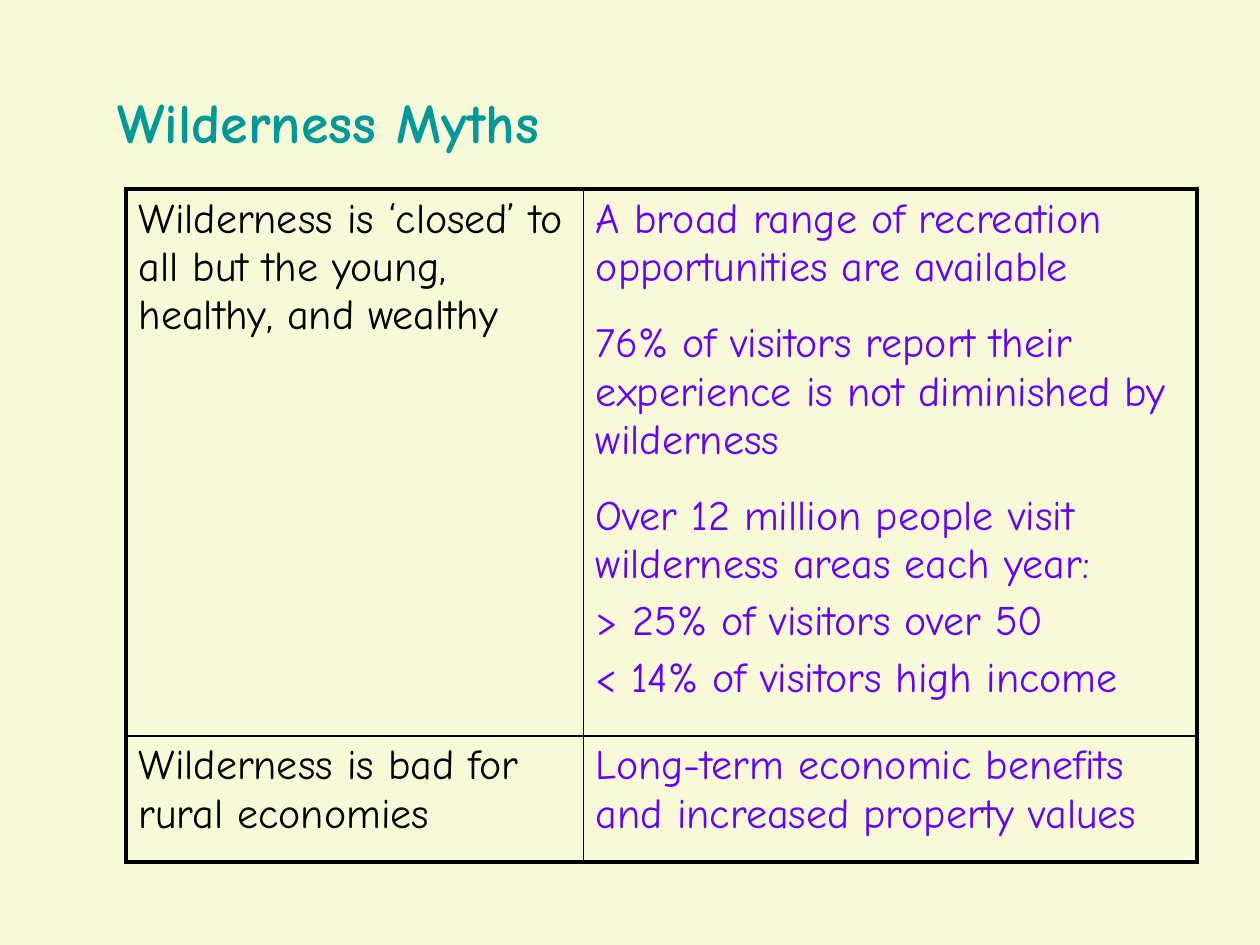
from dataclasses import dataclass

from lxml import etree
from pptx import Presentation
from pptx.dml.color import RGBColor
from pptx.enum import text
from pptx.oxml import ns
from pptx.util import Pt

COLORS = {"page": "F8F9D7", "title": "009999", "myth": "000000", "fact": "6600FF", "border": "000000"}
FONT = "Comic Neue"
COLUMN_WIDTHS = (261.36, 350.64)
THICK, THIN = 2.25, 1
ITEM_GAP, TOPIC_GAP = 4.8, 16


@dataclass
class Line:
    words: str
    gap: float = 0


@dataclass
class Myth:
    height: float
    claim: list[Line]
    facts: list[Line]


MYTHS = [
    Myth(
        312.48,
        [Line("Wilderness is ‘closed’ to all but the young, healthy, and wealthy")],
        [
            Line("A broad range of recreation opportunities are available"),
            Line("76% of visitors report their experience is not diminished by wilderness", TOPIC_GAP),
            Line("Over 12 million people visit wilderness areas each year:", TOPIC_GAP),
            Line("> 25% of visitors over 50", ITEM_GAP),
            Line("< 14% of visitors high income", ITEM_GAP),
        ],
    ),
    Myth(
        72,
        [Line("Wilderness is bad for rural economies")],
        [Line("Long-term economic benefits and increased property values")],
    ),
]


def write_lines(frame, lines: list[Line], size: float, color: str, bold: bool = False) -> None:
    """Fill a text frame with one paragraph per line."""
    frame.word_wrap = True
    for index, line in enumerate(lines):
        para = frame.add_paragraph() if index else frame.paragraphs[0]
        para.text = line.words
        para.space_before = Pt(line.gap)
        para.font.name = FONT
        para.font.size = Pt(size)
        para.font.bold = bold
        para.font.color.rgb = RGBColor.from_string(COLORS[color])


def draw_borders(cell, widths: dict[str, float]) -> None:
    """Give each side of a cell a solid line of its own width."""
    properties = cell._tc.get_or_add_tcPr()
    for side, width in widths.items():
        line = etree.SubElement(properties, ns.qn(f"a:ln{side}"), w=str(Pt(width)))
        fill = etree.SubElement(line, ns.qn("a:solidFill"))
        etree.SubElement(fill, ns.qn("a:srgbClr"), val=COLORS["border"])


def add_title(page, words: str) -> None:
    """Place the heading above the table."""
    box = page.shapes.add_textbox(Pt(60), Pt(42), Pt(330), Pt(54))
    box.text_frame.vertical_anchor = text.MSO_ANCHOR.MIDDLE
    write_lines(box.text_frame, [Line(words)], 32, "title", True)


def add_myth_table(page, myths: list[Myth]) -> None:
    """Draw myths beside facts, with a thick outer frame."""
    height = sum(myth.height for myth in myths)
    table = page.shapes.add_table(
        len(myths), 2, Pt(72), Pt(108), Pt(sum(COLUMN_WIDTHS)), Pt(height)
    ).table
    table.first_row = table.horz_banding = False
    for column, width in zip(table.columns, COLUMN_WIDTHS):
        column.width = Pt(width)
    for row, myth in enumerate(myths):
        table.rows[row].height = Pt(myth.height)
        for column, (lines, color) in enumerate([(myth.claim, "myth"), (myth.facts, "fact")]):
            cell = table.cell(row, column)
            write_lines(cell.text_frame, lines, 24, color)
            outer = {"L": column == 0, "R": column == 1, "T": row == 0, "B": row == len(myths) - 1}
            draw_borders(cell, {side: THICK if edge else THIN for side, edge in outer.items()})
            cell.fill.background()


def main() -> None:
    """Build and save the slide."""
    deck = Presentation()
    deck.slide_width, deck.slide_height = Pt(720), Pt(540)
    page = deck.slides.add_slide(deck.slide_layouts[6])
    page.background.fill.solid()
    page.background.fill.fore_color.rgb = RGBColor.from_string(COLORS["page"])
    add_title(page, "Wilderness Myths")
    add_myth_table(page, MYTHS)
    deck.save("out.pptx")


if __name__ == "__main__":
    main()
